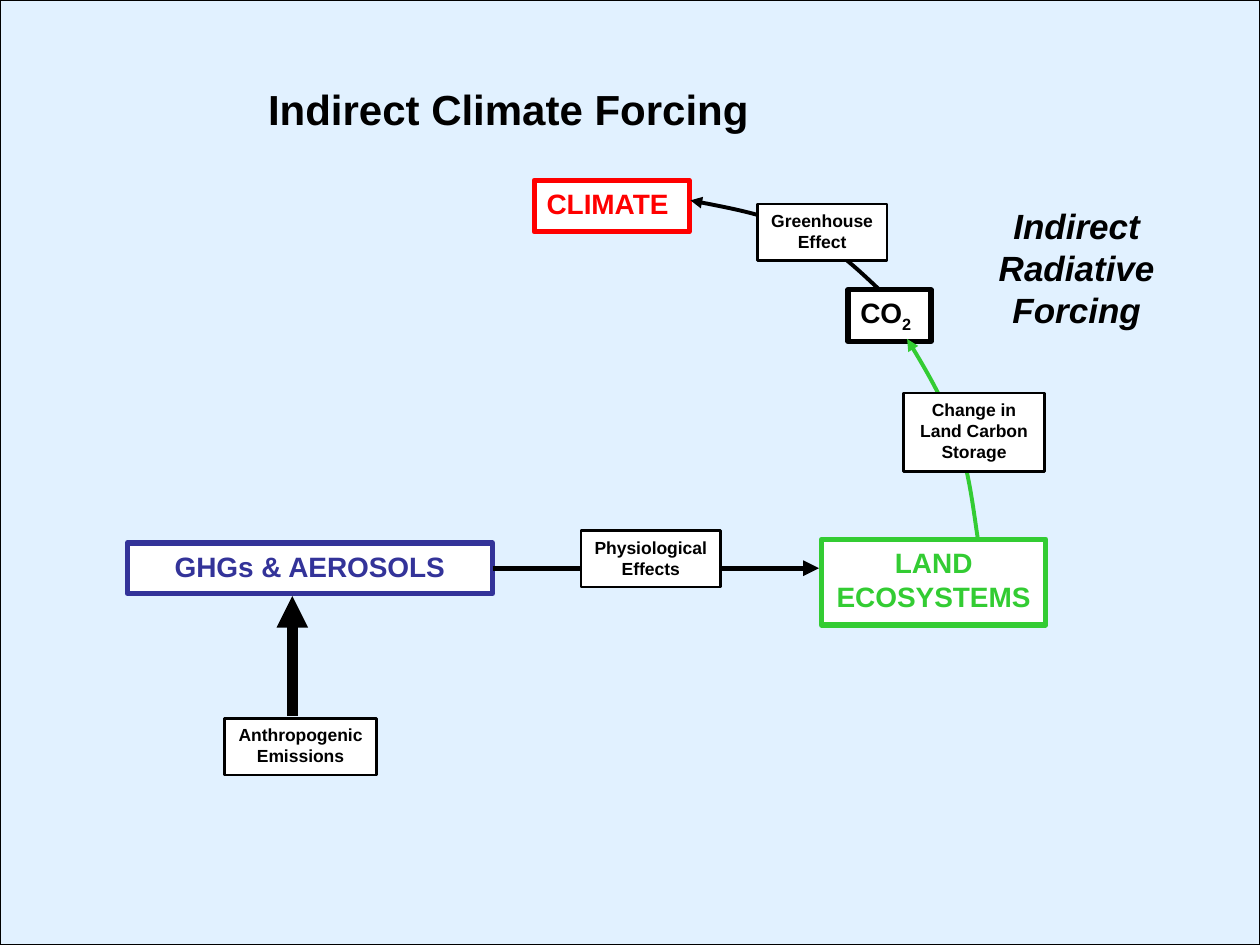
from lxml.etree import SubElement
from pptx import Presentation
from pptx.dml.color import RGBColor
from pptx.enum.shapes import MSO_CONNECTOR, MSO_SHAPE
from pptx.enum.text import MSO_ANCHOR, PP_ALIGN
from pptx.oxml.ns import qn
from pptx.util import Inches, Pt

BLACK, BLUE, RED, GREEN = "000000", "333399", "FF0000", "33CC33"
LEFT, MID = PP_ALIGN.LEFT, PP_ALIGN.CENTER

NODES = {
    "gas": (["GHGs & AEROSOLS"], (1.01, 4.31, 2.9, 0.4), BLUE, MID),
    "climate": (["CLIMATE"], (4.24, 1.43, 1.23, 0.41), RED, LEFT),
    "land": (["LAND", "ECOSYSTEMS"], (6.52, 4.28, 1.78, 0.68), GREEN, MID),
    "carbon": (["CO"], (6.73, 2.3, 0.66, 0.41), BLACK, LEFT),
}
LABELS = [
    (["Anthropogenic", "Emissions"], (1.78, 5.7, 1.21, 0.45)),
    (["Greenhouse", "Effect"], (6.01, 1.62, 1.03, 0.45)),
    (["Change in", "Land Carbon", "Storage"], (7.17, 3.12, 1.12, 0.62)),
    (["Physiological", "Effects"], (4.61, 4.21, 1.11, 0.45)),
]
TITLES = [
    (["Indirect Climate Forcing"], (1.98, 0.61, 4.11, 0.5), 24, False),
    (["Indirect", "Radiative", "Forcing"], (7.29, 1.57, 2.51, 1.1), 20, True),
]
CURVES = [
    ([(7.76, 4.27), (7.72, 4), (7.69, 3.74), (7.6, 3.48),
      (7.51, 3.22), (7.36, 2.95), (7.2, 2.69)], GREEN),
    ([(6.98, 2.3), (6.79, 2.12), (6.6, 1.94), (6.35, 1.83),
      (6.1, 1.71), (5.79, 1.65), (5.48, 1.59)], BLACK),
]


def color(code):
    return RGBColor.from_string(code)


def write(shape, lines, size, code, align=MID, slant=False):
    frame = shape.text_frame
    frame.word_wrap = False
    frame.vertical_anchor = MSO_ANCHOR.TOP
    frame.text = "\n".join(lines)
    for para in frame.paragraphs:
        para.alignment = align
        font = para.font
        font.name, font.size = "Arial", Pt(size)
        font.bold, font.italic = True, slant
        font.color.rgb = color(code)


def stroke(shape, code, width):
    shape.line.color.rgb = color(code)
    shape.line.width = Pt(width)


def block(place, code, width, fill="FFFFFF"):
    shape = shapes.add_shape(MSO_SHAPE.RECTANGLE, *map(Inches, place))
    shape.shadow.inherit = False
    shape.fill.solid()
    shape.fill.fore_color.rgb = color(fill)
    stroke(shape, code, width)
    return shape


def tip(shape):
    SubElement(shape.line._get_or_add_ln(), qn("a:tailEnd"), type="triangle")


def arrow(start, end, width):
    line = shapes.add_connector(
        MSO_CONNECTOR.STRAIGHT, *map(Inches, start + end))
    stroke(line, BLACK, width)
    tip(line)
    SubElement(line._element.spPr, qn("a:effectLst"))
    return line


def curve(points, code):
    dots = [(Inches(x), Inches(y)) for x, y in points]
    pen = shapes.build_freeform(*dots[0])
    pen.add_line_segments(dots[1:], close=False)
    shape = pen.convert_to_shape()
    route = next(shape._element.iter(qn("a:path")))
    steps = route.findall(qn("a:lnTo"))
    for i in range(0, len(steps), 3):
        bend = SubElement(route, qn("a:cubicBezTo"))
        for step in steps[i:i + 3]:
            bend.append(step[0])
            route.remove(step)
    shape.shadow.inherit = False
    shape.fill.background()
    stroke(shape, code, 2.25)
    tip(shape)


deck = Presentation()
deck.slide_width, deck.slide_height = Inches(10), Inches(7.5)
shapes = deck.slides.add_slide(deck.slide_layouts[6]).shapes

block((0, 0, 10, 7.5), BLACK, 0.75, "E1F1FF")

nodes = {}
for name, (lines, place, code, align) in NODES.items():
    nodes[name] = block(place, code, 3)
    write(nodes[name], lines, 16, code, align)
sub = nodes["carbon"].text_frame.paragraphs[0].add_run()
sub.text = "2"
sub.font._element.set("baseline", "-25000")

for points, code in CURVES:
    curve(points, code)
arrow((2.32, 5.68), (2.32, 4.73), 6)
arrow((3.91, 4.51), (6.5, 4.51), 3).begin_connect(nodes["gas"], 3)

for lines, place in LABELS:
    write(block(place, BLACK, 1.5), lines, 10, BLACK)
for lines, place, size, slant in TITLES:
    box = shapes.add_textbox(*map(Inches, place))
    write(box, lines, size, BLACK, slant=slant)

deck.save("out.pptx")
